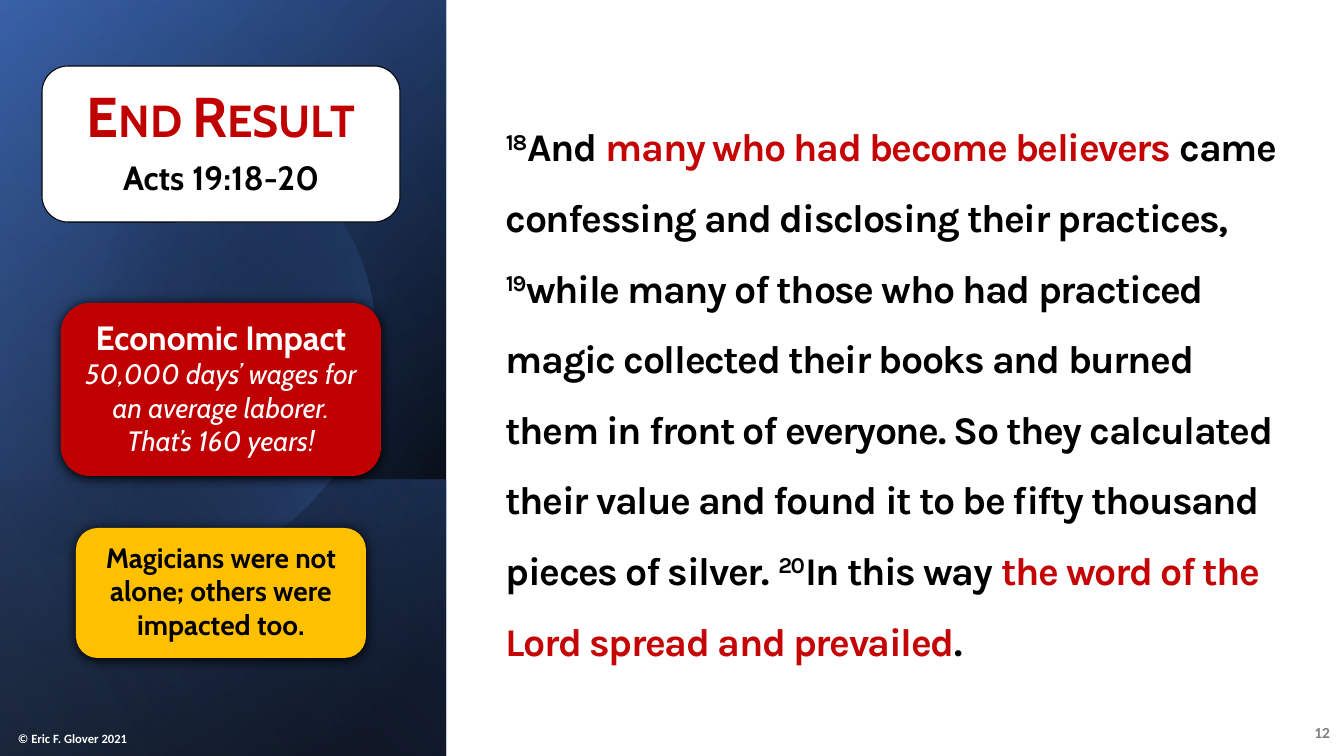
from math import cos, radians, sin

from pptx import Presentation
from pptx.dml.color import RGBColor
from pptx.enum.shapes import MSO_SHAPE
from pptx.enum.text import MSO_ANCHOR, PP_ALIGN
from pptx.oxml import parse_xml
from pptx.oxml.ns import nsdecls, qn
from pptx.util import Pt

PX = 12192000 / 1344
THEME = {
    "black": "000000", "white": "FFFFFF", "red": "C00000", "verse_red": "C50505",
    "gold": "FFC000", "grey": "808080", "navy": "2F5597", "blue": "4472C4", "pale": "8FAADC",
    "heading": "Cabin", "verse": "Karla", "small": "Calibri",
    "title": 40, "passage": 28, "subtitle": 24, "note": 20, "number": 11, "credit": 9,
}


def paint_gradient(sp, stops, angle):
    sp.shadow.inherit = False
    sp.line.fill.background()
    sp.fill.background()
    gs = "".join(
        f'<a:gs pos="{pos * 1000}"><a:srgbClr val="{THEME[color]}">'
        f'<a:alpha val="{alpha * 1000}"/></a:srgbClr></a:gs>'
        for pos, color, alpha in stops
    )
    grad = parse_xml(
        f'<a:gradFill {nsdecls("a")} rotWithShape="1"><a:gsLst>{gs}</a:gsLst>'
        f'<a:lin ang="{angle * 60000}" scaled="0"/></a:gradFill>'
    )
    spPr = sp._element.spPr
    spPr.replace(spPr.find(qn("a:noFill")), grad)


def write(p, runs, face, size, color, bold=True, italic=False, align=PP_ALIGN.CENTER, after=0):
    p.alignment = align
    p.space_after = Pt(after)
    p.font.name = THEME[face]
    p.font.size = Pt(THEME[size])
    p.font.color.rgb = RGBColor.from_string(THEME[color])
    p.font.bold = bold
    p.font.italic = italic
    for text, style in runs:
        r = p.add_run()
        r.text = text
        if style == "super":
            r._r.get_or_add_rPr().set("baseline", "30000")
        elif style:
            r.font.color.rgb = RGBColor.from_string(THEME[style])


prs = Presentation()
prs.slide_width = round(1344 * PX)
prs.slide_height = round(756 * PX)
s = prs.slides.add_slide(prs.slide_layouts[6])

SIDE = 446
disc = None
layers = [
    (0, 756, [(8, "black", 100), (100, "navy", 100)], 50),
    (0, 756, [(0, "black", 0), (99, "blue", 46)], 30),
    (480, 276, [(2, "blue", 29), (100, "black", 30)], 130),
    (0, 756, [(0, "black", 0), (99, "pale", 11)], 120),
]
for i, (top, height, stops, angle) in enumerate(layers):
    if i == 3:
        cx, cy, radius = 145, 341, 230
        arc = [
            (cx + radius * cos(radians(a)), cy + radius * sin(radians(a)))
            for a in range(-129, 130, 3)
        ]
        fb = s.shapes.build_freeform(round(arc[0][0]), round(arc[0][1]), scale=PX)
        fb.add_line_segments(arc[1:], close=True)
        disc = fb.convert_to_shape()
        paint_gradient(disc, [(29, "black", 0), (100, "blue", 43)], 14)
    left = (SIDE - height) / 2
    panel = s.shapes.add_shape(
        MSO_SHAPE.RECTANGLE, round(left * PX), round((top - left) * PX),
        round(height * PX), round(SIDE * PX),
    )
    panel.rotation = 90
    panel._element.spPr.find(qn("a:xfrm")).set("flipH", "1")
    paint_gradient(panel, stops, angle)

passage = [
    ("18", "super"),
    ("And ", None),
    ("many who had become believers", "verse_red"),
    (" came confessing and disclosing their practices, ", None),
    ("19", "super"),
    ("while many of those who had practiced magic collected their books and burned them "
     "in front of everyone. So they calculated their value and found it to be fifty "
     "thousand pieces of silver. ", None),
    ("20", "super"),
    ("In this way ", None),
    ("the word of the Lord spread and prevailed", "verse_red"),
    (".", None),
]
labels = [
    ((496, 78, 798, 612), passage, "verse", "passage", "black", PP_ALIGN.LEFT, MSO_ANCHOR.MIDDLE, 0),
    ((1290, 712, 50, 40), [("12", None)], "small", "number", "grey", PP_ALIGN.RIGHT, MSO_ANCHOR.MIDDLE, 5),
    ((8, 723, 158, 28), [("© Eric F. Glover 2021", None)], "small", "credit", "white",
     PP_ALIGN.LEFT, MSO_ANCHOR.BOTTOM, 5),
]
for box, runs, face, size, color, align, anchor, inset in labels:
    tf = s.shapes.add_textbox(*(round(v * PX) for v in box)).text_frame
    tf.word_wrap = True
    tf.vertical_anchor = anchor
    tf.margin_top = round(inset * PX)
    p = tf.paragraphs[0]
    write(p, runs, face, size, color, align=align, after=6 if size == "passage" else 0)
    if size == "passage":
        p.line_spacing = 1.5
        p._p.pPr.find(qn("a:defRPr")).set("spc", "-100")

cards = [
    ((42, 66, 358, 156), "white", 0, 10, [
        ("End Result", "title", "red", True, False, 6),
        ("Acts 19:18-20", "subtitle", "black", True, False, 6),
    ]),
    ((61, 303, 320, 173), "red", 10, 5, [
        ("Economic Impact", "subtitle", "white", True, False, 0),
        ("50,000 days’ wages for an average laborer. That’s 160 years!",
         "note", "white", False, True, 0),
    ]),
    ((76, 528, 290, 130), "gold", 10, 5, [
        ("Magicians were not alone; others were impacted too.", "note", "black", True, False, 0),
    ]),
]
for box, fill, side, bottom, lines in cards:
    sp = s.shapes.add_shape(MSO_SHAPE.ROUNDED_RECTANGLE, *(round(v * PX) for v in box))
    sp.shadow.inherit = False
    sp.fill.solid()
    sp.fill.fore_color.rgb = RGBColor.from_string(THEME[fill])
    if fill == "white":
        sp.line.color.rgb = RGBColor.from_string(THEME["black"])
        sp.line.width = Pt(0.75)
    else:
        sp.line.fill.background()
        sp._element.spPr.find(qn("a:effectLst")).append(parse_xml(
            f'<a:outerShdw {nsdecls("a")} blurRad="{Pt(8.5)}" dist="{Pt(1)}" dir="5400000" '
            f'algn="t" rotWithShape="0"><a:srgbClr val="{THEME["black"]}"/></a:outerShdw>'
        ))
    tf = sp.text_frame
    tf.word_wrap = True
    tf.vertical_anchor = MSO_ANCHOR.MIDDLE
    tf.margin_left = tf.margin_right = round(side * PX)
    tf.margin_top = 0
    tf.margin_bottom = round(bottom * PX)
    for i, (text, size, color, bold, italic, after) in enumerate(lines):
        p = tf.add_paragraph() if i else tf.paragraphs[0]
        write(p, [(text, None)], "heading", size, color, bold, italic, after=after)
        if size == "title":
            p._p.pPr.find(qn("a:defRPr")).set("cap", "small")

prs.save("out.pptx")
